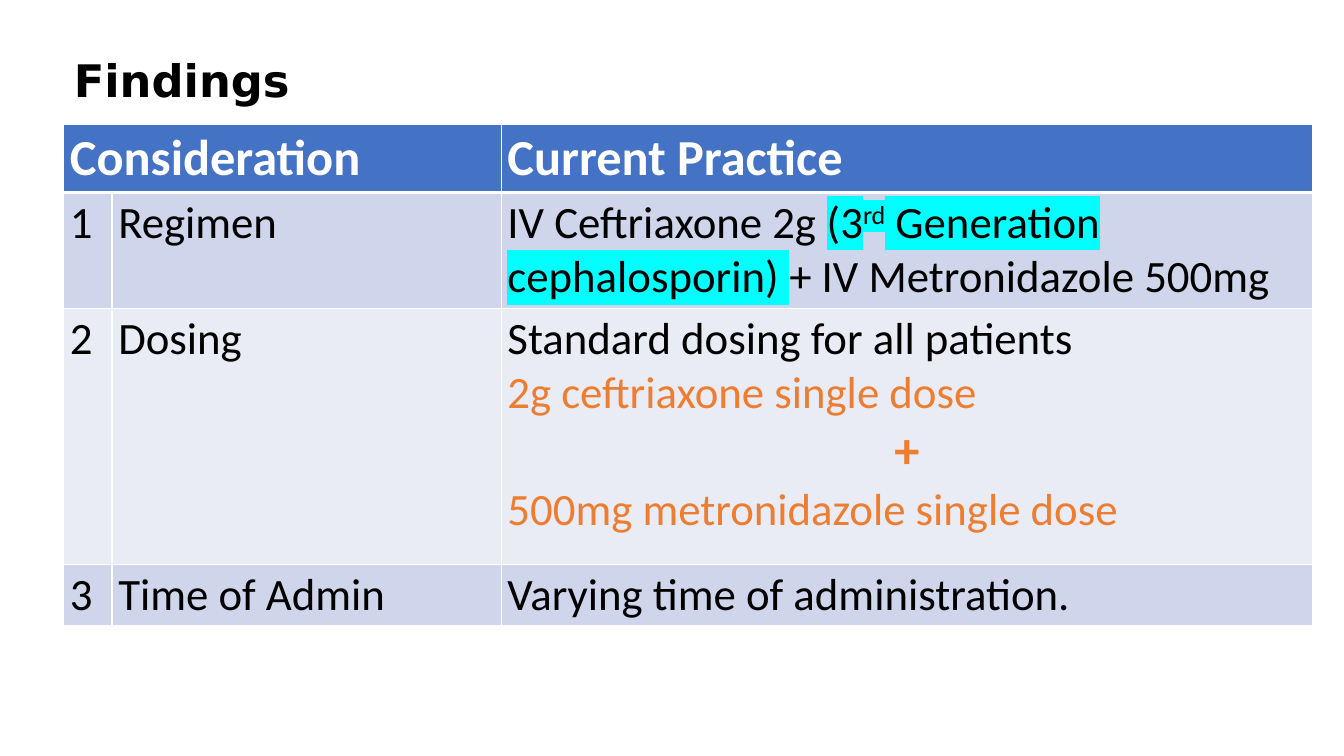
from lxml import etree
from pptx import Presentation
from pptx.dml.color import RGBColor
from pptx.enum.text import MSO_ANCHOR, MSO_AUTO_SIZE, PP_ALIGN
from pptx.oxml.ns import qn
from pptx.util import Pt

BLACK = RGBColor(0x00, 0x00, 0x00)
WHITE = RGBColor(0xFF, 0xFF, 0xFF)
BLUE = RGBColor(0x44, 0x72, 0xC4)
ORANGE = RGBColor(0xED, 0x7D, 0x31)
CYAN = RGBColor(0x00, 0xFF, 0xFF)
DARK_BAND = RGBColor(0xCF, 0xD5, 0xEA)
LIGHT_BAND = RGBColor(0xE9, 0xEB, 0xF5)
LEFT, CENTER = PP_ALIGN.LEFT, PP_ALIGN.CENTER
BOTTOM = MSO_ANCHOR.BOTTOM
NO_FIT = MSO_AUTO_SIZE.NONE


def format_font(font, size, color, bold, name="Calibri"):
    font.size = Pt(size)
    font.bold = bold
    font.color.rgb = color
    font.name = name


def add_border(cell, side, width):
    line = etree.SubElement(cell._tc.get_or_add_tcPr(), qn(f"a:{side}"), w=str(Pt(width)))
    fill = etree.SubElement(line, qn("a:solidFill"))
    etree.SubElement(fill, qn("a:srgbClr"), val=str(WHITE))


deck = Presentation()
deck.slide_width, deck.slide_height = Pt(960), Pt(540)
page = deck.slides.add_slide(deck.slide_layouts[5])

title = page.shapes.title
title.left, title.top, title.width, title.height = Pt(45.5), Pt(14.5), Pt(284.5), Pt(66)
title.text_frame.text = "Findings"
title.text_frame.vertical_anchor = BOTTOM
title.text_frame.auto_size = NO_FIT
heading = title.text_frame.paragraphs[0]
heading.alignment = LEFT
heading.line_spacing = 0.9
format_font(heading.font, 32, BLACK, True, "DejaVu Sans")

regimen = [
    ("IV Ceftriaxone 2g ", False, False),
    ("(3", True, False),
    ("rd", True, True),
    (" Generation cephalosporin) ", True, False),
    ("+ IV Metronidazole 500mg", False, False),
]
dosing = [
    ("Standard dosing for all patients", 32, BLACK, False, LEFT),
    ("2g ceftriaxone single dose", 32, ORANGE, False, LEFT),
    ("+", 36, ORANGE, True, CENTER),
    ("500mg metronidazole single dose", 32, ORANGE, False, LEFT),
]
rows = [
    ["Consideration", "", "Current Practice"],
    ["1", "Regimen", ""],
    ["2", "Dosing", ""],
    ["3", "Time of Admin", "Varying time of administration."],
]
column_widths = [34.5, 278, 579.5]
row_heights = [43, 74, 183, 39]
row_fills = [BLUE, DARK_BAND, LIGHT_BAND, DARK_BAND]

table = page.shapes.add_table(4, 3, Pt(45.5), Pt(88.9), Pt(892), Pt(339)).table
for column, width in zip(table.columns, column_widths):
    column.width = Pt(width)
for row, height in zip(table.rows, row_heights):
    row.height = Pt(height)

for row_index, texts in enumerate(rows):
    is_header = row_index == 0
    for column_index, text in enumerate(texts):
        cell = table.cell(row_index, column_index)
        cell.margin_left = cell.margin_right = Pt(4.5)
        cell.margin_top = cell.margin_bottom = Pt(2.25)
        for side in ("lnL", "lnR", "lnT", "lnB"):
            header_edge = (is_header and side == "lnB") or (row_index == 1 and side == "lnT")
            add_border(cell, side, 3 if header_edge else 1)
        cell.fill.solid()
        cell.fill.fore_color.rgb = row_fills[row_index]
        cell.text = text
        font = cell.text_frame.paragraphs[0].font
        if is_header:
            format_font(font, 36, WHITE, True)
        else:
            format_font(font, 32, BLACK, False)
table.cell(0, 0).merge(table.cell(0, 1))

para = table.cell(1, 2).text_frame.paragraphs[0]
for text, highlighted, raised in regimen:
    span = para.add_run()
    span.text = text
    properties = span.font._element
    if highlighted:
        highlight = etree.SubElement(properties, qn("a:highlight"))
        etree.SubElement(highlight, qn("a:srgbClr"), val=str(CYAN))
    if raised:
        properties.set("baseline", "30000")

frame = table.cell(2, 2).text_frame
frame.text = "\n".join(line[0] for line in dosing)
for para, (text, size, color, bold, alignment) in zip(frame.paragraphs, dosing):
    para.alignment = alignment
    format_font(para.font, size, color, bold)

deck.save("out.pptx")
